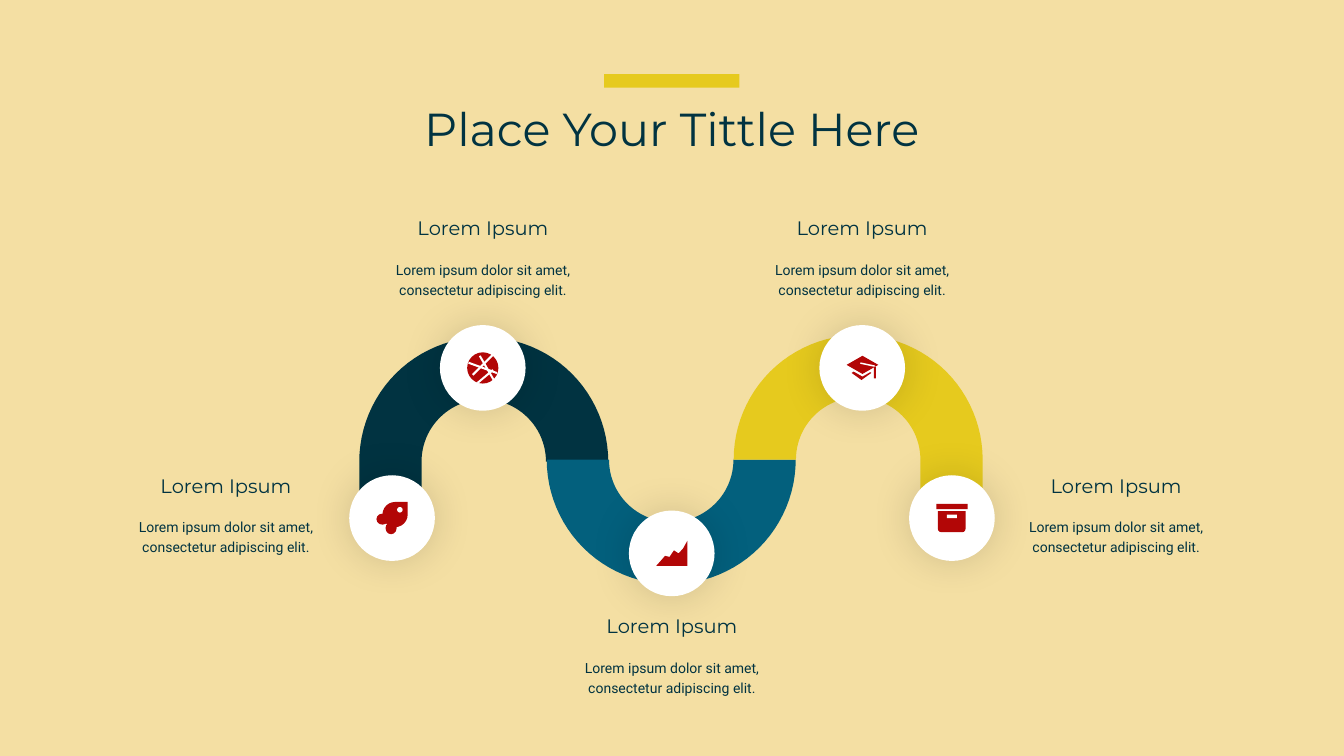
import math

import lxml.etree
import pptx
import pptx.dml.color
import pptx.enum.shapes
import pptx.enum.text
import pptx.oxml.ns
import pptx.util

THEME = {
    "sand": "F4DFA3", "navy": "013341", "teal": "03607D", "yellow": "E6CA1E",
    "red": "B20606", "white": "FFFFFF", "black": "000000",
    "title": ("Montserrat", 66), "heading": ("Montserrat", 27.8), "body": ("Roboto", 20),
}
# The slide is a grid of square cells, 150 rows high.
COLUMNS, ROWS = 266.7, 150
CELL = pptx.util.Inches(0.1)
INSET = pptx.util.Inches(0.03)
PRESET = pptx.enum.shapes.MSO_SHAPE

# Icon parts: preset, left, top, width, height in cells from the icon's corner, colour, rotation.
ICONS = {
    "rocket": [
        (PRESET.TEAR, 0, 2.3, 2.4, 2.2, "red", 0),
        (PRESET.TEAR, 1.8, 4, 2.2, 2.4, "red", 0),
        (PRESET.TEAR, 1.2, 0, 5, 5, "red", 0),
        (PRESET.OVAL, 4.1, 1, 1.1, 1.1, "white", 0),
    ],
    "globe": [
        (PRESET.OVAL, 0, 0, 6.2, 6.2, "red", 0),
        (PRESET.RECTANGLE, 0.1, 2.9, 6, 0.4, "white", 20),
        (PRESET.RECTANGLE, 0.3, 2.3, 5.6, 0.4, "white", -45),
        (PRESET.RECTANGLE, 1, 3.1, 6, 0.4, "white", 60),
        (PRESET.RECTANGLE, 1.6, 4.6, 4, 0.4, "white", -40),
    ],
    "growth": [],
    "graduate": [
        (PRESET.DIAMOND, 1, 2, 3.9, 2.8, "red", 0),
        (PRESET.DIAMOND, 0, 0.5, 6.3, 3.6, "white", 0),
        (PRESET.DIAMOND, 0, 0, 6.3, 3.6, "red", 0),
        (PRESET.RECTANGLE, 2.7, 1.6, 2.9, 0.3, "white", 12),
        (PRESET.RECTANGLE, 5.4, 2.2, 0.4, 2.3, "red", 0),
    ],
    "box": [
        (PRESET.RECTANGLE, 0, 0, 6.2, 1, "red", 0),
        (PRESET.ROUND_2_SAME_RECTANGLE, 0.3, 1.4, 5.5, 4.2, "red", 180),
        (PRESET.RECTANGLE, 2.1, 2.1, 2, 0.7, "white", 0),
    ],
}
ICON_WIDTH = 6.2
ICON_HEIGHTS = {"rocket": 6.4, "globe": 6.2, "growth": 5, "graduate": 4.8, "box": 5.6}
GROWTH_LEVELS = [0, 1, 2, 1.8, 3.1, 2.5, 3.4, 5]


def paint(shape, colour):
    shape.shadow.inherit = False
    shape.fill.solid()
    shape.fill.fore_color.rgb = pptx.dml.color.RGBColor.from_string(THEME[colour])
    shape.line.fill.background()
    return shape


def write(frame, text, style, spacing, anchor):
    name, size = THEME[style]
    frame.text = text
    paragraph = frame.paragraphs[0]
    font = paragraph.runs[0].font
    font.color.rgb = pptx.dml.color.RGBColor.from_string(THEME["navy"])
    formats = [
        (frame, {"word_wrap": True, "vertical_anchor": anchor,
                 "auto_size": pptx.enum.text.MSO_AUTO_SIZE.NONE,
                 "margin_left": INSET, "margin_right": INSET,
                 "margin_top": INSET, "margin_bottom": INSET}),
        (paragraph, {"alignment": pptx.enum.text.PP_ALIGN.CENTER, "line_spacing": spacing}),
        (font, {"name": name, "size": pptx.util.Pt(size)}),
    ]
    for target, values in formats:
        for attribute, value in values.items():
            setattr(target, attribute, value)


deck = pptx.Presentation()
deck.slide_width = int(COLUMNS * CELL)
deck.slide_height = ROWS * CELL
slide = deck.slides.add_slide(deck.slide_layouts[5])
shapes = slide.shapes
slide.background.fill.solid()
slide.background.fill.fore_color.rgb = pptx.dml.color.RGBColor.from_string(THEME["sand"])

# Title and the bar above it
title = shapes.title
title_box = {"left": 77.4, "top": 19.4, "width": 111.8, "height": 11.9}
for side, cells in title_box.items():
    setattr(title, side, int(cells * CELL))
write(title.text_frame, "Place Your Tittle Here", "title", 1.0,
      pptx.enum.text.MSO_ANCHOR.MIDDLE)
bar = [int(cells * CELL) for cells in (119.9, 14.7, 26.8, 2.7)]
paint(shapes.add_shape(PRESET.RECTANGLE, *bar), "yellow")

# Winding road: quarter rings, the first and last with a pointed leg
OUTER, INNER = 24.7, 12.35
LEG, TIP = 9, 14.7
STEPS = 24
road = [  # centre column, centre row, start angle, end angle, colour, leg
    (96, 91.6, 180, 270, "navy", True),
    (96, 91.6, 270, 360, "navy", False),
    (133.2, 91.2, 180, 90, "teal", False),
    (133.2, 91.2, 90, 0, "teal", False),
    (170.3, 91.2, 180, 270, "yellow", False),
    (170.3, 91.2, 360, 270, "yellow", True),
]
for column, row, start, end, colour, has_leg in road:
    angles = [math.radians(start + (end - start) * step / STEPS) for step in range(STEPS + 1)]
    edge = [(OUTER * math.cos(a), OUTER * math.sin(a)) for a in angles]
    edge += [(INNER * math.cos(a), INNER * math.sin(a)) for a in reversed(angles)]
    if has_leg:
        side = math.cos(angles[0])
        edge += [(side * INNER, LEG), (side * (INNER + OUTER) / 2, TIP), (side * OUTER, LEG)]
    points = [(100 * (column + x), 100 * (row + y)) for x, y in edge]
    builder = shapes.build_freeform(*points[0], scale=CELL / 100)
    builder.add_line_segments(points[1:], close=True)
    paint(builder.convert_to_shape(), colour)

# Stops: disc with icon, heading and text
DISC = 17
HEADING_WIDTH, HEADING_HEIGHT = 28.3, 6.7
BODY_WIDTH, BODY_HEIGHT, BODY_DROP = 37.5, 10.8, 9.15
stops = [  # icon, disc column and row, text column, heading row
    ("rocket", 77.8, 102.8, 44.85, 92.8),
    ("globe", 95.8, 73, 95.85, 41.7),
    ("growth", 133.3, 109.8, 133.35, 120.7),
    ("graduate", 171.1, 73, 171.1, 41.7),
    ("box", 188.9, 102.8, 221.5, 92.8),
]
for icon, column, row, text_column, heading_row in stops:
    disc_box = [int(cells * CELL) for cells in (column - DISC / 2, row - DISC / 2, DISC, DISC)]
    disc = paint(shapes.add_shape(PRESET.OVAL, *disc_box), "white")
    effects = disc._element.spPr.find(pptx.oxml.ns.qn("a:effectLst"))
    glow = lxml.etree.SubElement(effects, pptx.oxml.ns.qn("a:outerShdw"),
                                 blurRad=str(pptx.util.Pt(60)), dist="0", dir="5400000",
                                 algn="ctr", rotWithShape="0")
    tint = lxml.etree.SubElement(glow, pptx.oxml.ns.qn("a:srgbClr"), val=THEME["black"])
    lxml.etree.SubElement(tint, pptx.oxml.ns.qn("a:alpha"), val="15000")

    icon_left = column - ICON_WIDTH / 2
    icon_top = row - ICON_HEIGHTS[icon] / 2
    for preset, left, top, width, height, colour, rotation in ICONS[icon]:
        part_box = [int(cells * CELL)
                    for cells in (icon_left + left, icon_top + top, width, height)]
        paint(shapes.add_shape(preset, *part_box), colour).rotation = rotation
    if icon == "growth":
        base = icon_top + ICON_HEIGHTS[icon]
        step = ICON_WIDTH / (len(GROWTH_LEVELS) - 1)
        ridge = [(100 * (icon_left + step * index), 100 * (base - level))
                 for index, level in enumerate(GROWTH_LEVELS)]
        builder = shapes.build_freeform(*ridge[0], scale=CELL / 100)
        builder.add_line_segments(ridge[1:] + [(ridge[-1][0], 100 * base)], close=True)
        paint(builder.convert_to_shape(), "red")

    labels = [
        ("Lorem Ipsum", "heading", heading_row, HEADING_WIDTH, HEADING_HEIGHT),
        ("Lorem ipsum dolor sit amet, consectetur adipiscing elit.", "body",
         heading_row + BODY_DROP, BODY_WIDTH, BODY_HEIGHT),
    ]
    for text, style, top, width, height in labels:
        label_box = [int(cells * CELL) for cells in (text_column - width / 2, top, width, height)]
        write(shapes.add_textbox(*label_box).text_frame, text, style, 1.2,
              pptx.enum.text.MSO_ANCHOR.TOP)

deck.save("out.pptx")
